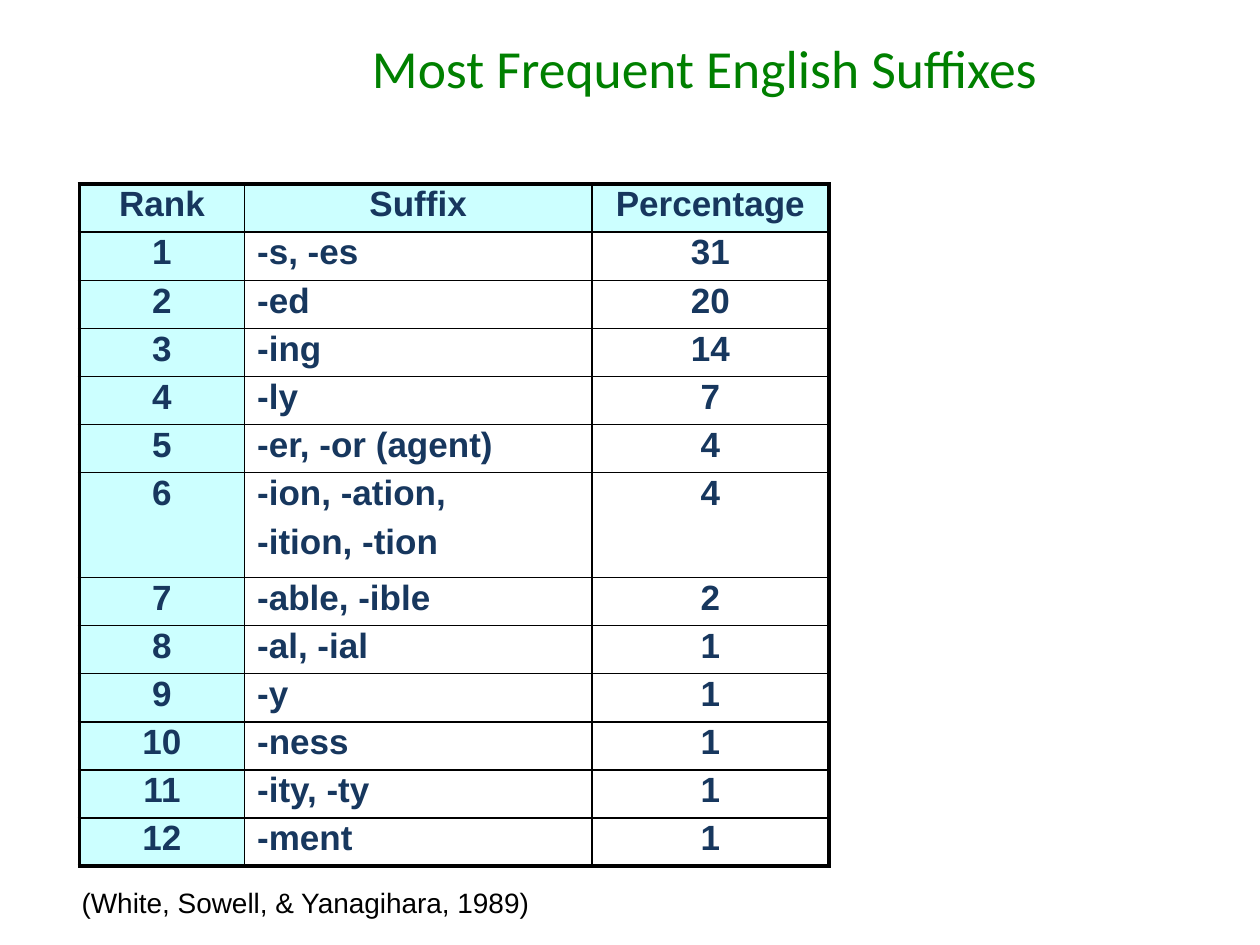
from lxml import etree
from pptx import Presentation
from pptx.dml.color import RGBColor
from pptx.enum.text import MSO_ANCHOR, PP_ALIGN
from pptx.oxml.ns import qn
from pptx.util import Cm, Pt

LEFT, CENTER, RIGHT = PP_ALIGN.LEFT, PP_ALIGN.CENTER, PP_ALIGN.RIGHT
MIDDLE = MSO_ANCHOR.MIDDLE

COLORS = {"title": "008000", "cell_text": "17375E", "heading_fill": "CCFFFF", "black": "000000"}
TITLE_BOX = (Cm(1.5), Cm(0.08), Cm(25.4), Cm(2.54))
TABLE_BOX = (Cm(1.6), Cm(3.71), Cm(15.11), Cm(13.78))
CITATION_BOX = (Cm(-0.03), Cm(17.73), Cm(10.95), Cm(0.94))

COLUMN_WIDTHS = (Cm(3.33), Cm(7.0), Cm(4.78))
ROW_HEIGHT, TALL_ROW_HEIGHT = Cm(0.97), Cm(2.11)
OUTER_BORDER, INNER_BORDER = Pt(2.25), Pt(1)
HEADINGS = ("Rank", "Suffix", "Percentage")
SUFFIXES = (
    ("-s, -es", 31),
    ("-ed", 20),
    ("-ing", 14),
    ("-ly", 7),
    ("-er, -or (agent)", 4),
    ("-ion, -ation,\n-ition, -tion", 4),
    ("-able, -ible", 2),
    ("-al, -ial", 1),
    ("-y", 1),
    ("-ness", 1),
    ("-ity, -ty", 1),
    ("-ment", 1),
)


def style_paragraph(paragraph, font_name, size, color, align, bold=False):
    paragraph.alignment = align
    font = paragraph.font
    font.name, font.size, font.bold = font_name, Pt(size), bold
    font.color.rgb = RGBColor.from_string(COLORS[color])


def add_border(cell, side, width):
    line = etree.SubElement(cell._tc.get_or_add_tcPr(), qn(f"a:ln{side}"), w=str(int(width)))
    fill = etree.SubElement(line, qn("a:solidFill"))
    etree.SubElement(fill, qn("a:srgbClr"), val=COLORS["black"])


def place_title(slide, box):
    title = slide.shapes.title
    title.left, title.top, title.width, title.height = box
    frame = title.text_frame
    frame.text = "Most Frequent English Suffixes"
    frame.vertical_anchor = MIDDLE
    style_paragraph(frame.paragraphs[0], "Calibri", 30.6, "title", CENTER)


def fill_cell(cell, text, align, is_heading, outer_sides):
    for side in "LRTB":
        add_border(cell, side, OUTER_BORDER if side in outer_sides else INNER_BORDER)
    if is_heading:
        cell.fill.solid()
        cell.fill.fore_color.rgb = RGBColor.from_string(COLORS["heading_fill"])
    else:
        cell.fill.background()
    cell.text = text
    for paragraph in cell.text_frame.paragraphs:
        style_paragraph(paragraph, "Arial", 20, "cell_text", align, bold=True)
        paragraph.line_spacing = 0.85
        paragraph.space_before = Pt(9)


def place_suffix_table(slide, box):
    rows = [HEADINGS]
    rows += [(str(rank), suffix, str(share)) for rank, (suffix, share) in enumerate(SUFFIXES, 1)]
    last_row, last_column = len(rows) - 1, len(HEADINGS) - 1
    table = slide.shapes.add_table(len(rows), len(HEADINGS), *box).table
    for column, width in zip(table.columns, COLUMN_WIDTHS):
        column.width = width
    for r, texts in enumerate(rows):
        table.rows[r].height = TALL_ROW_HEIGHT if "\n" in texts[1] else ROW_HEIGHT
        for c, text in enumerate(texts):
            edges = {"L": c == 0, "R": c == last_column, "T": r == 0, "B": r == last_row}
            outer_sides = [side for side, is_outer in edges.items() if is_outer]
            align = LEFT if c == 1 and r > 0 else CENTER
            fill_cell(table.cell(r, c), text, align, r == 0 or c == 0, outer_sides)


def place_citation(slide, box):
    frame = slide.shapes.add_textbox(*box).text_frame
    frame.word_wrap = True
    frame.text = "(White, Sowell, & Yanagihara, 1989)"
    style_paragraph(frame.paragraphs[0], "Arial", 16, "black", RIGHT)


def main():
    deck = Presentation()
    deck.slide_width, deck.slide_height = Cm(25.4), Cm(19.05)
    slide = deck.slides.add_slide(deck.slide_layouts[5])
    place_title(slide, TITLE_BOX)
    place_suffix_table(slide, TABLE_BOX)
    place_citation(slide, CITATION_BOX)
    deck.save("out.pptx")


if __name__ == "__main__":
    main()
